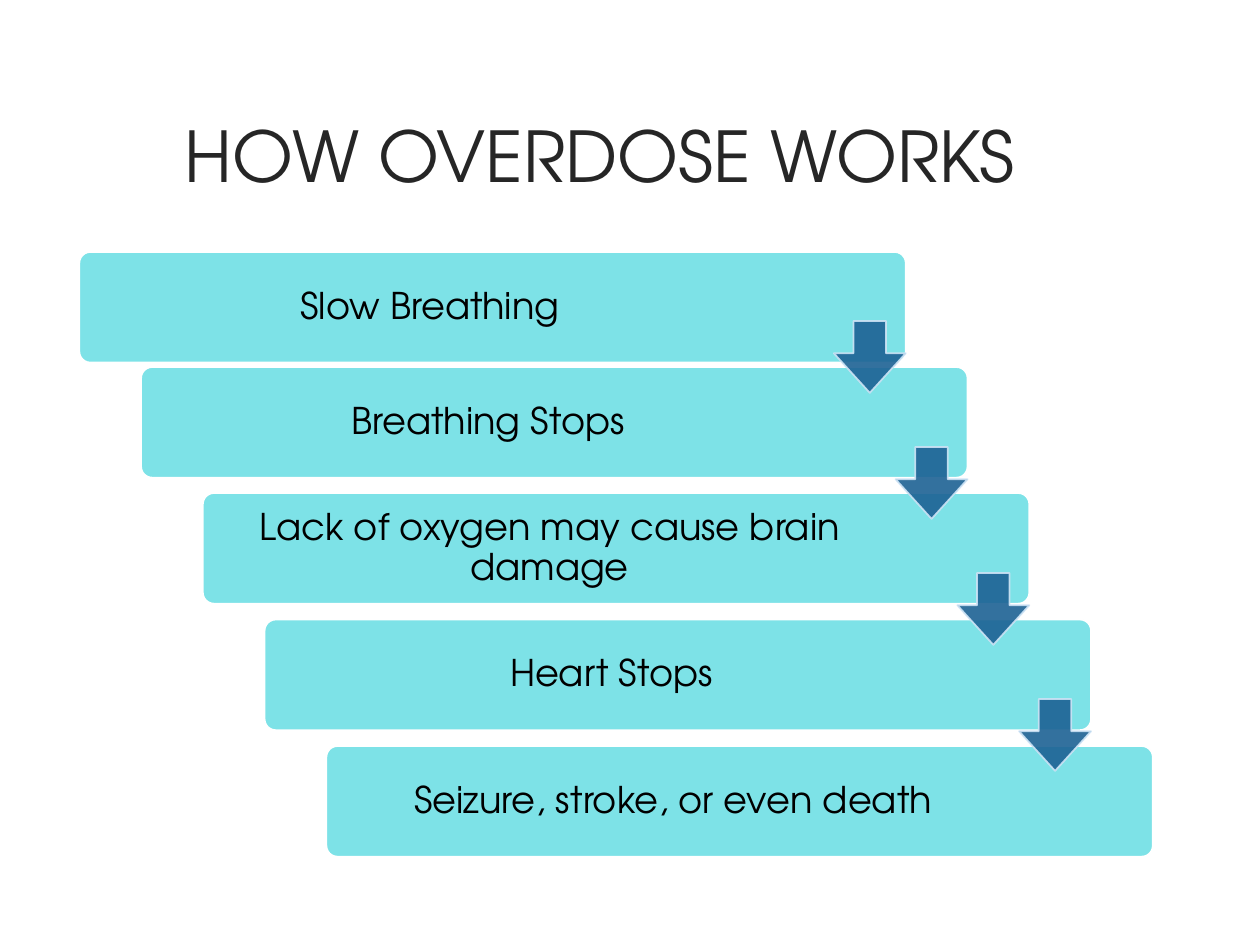
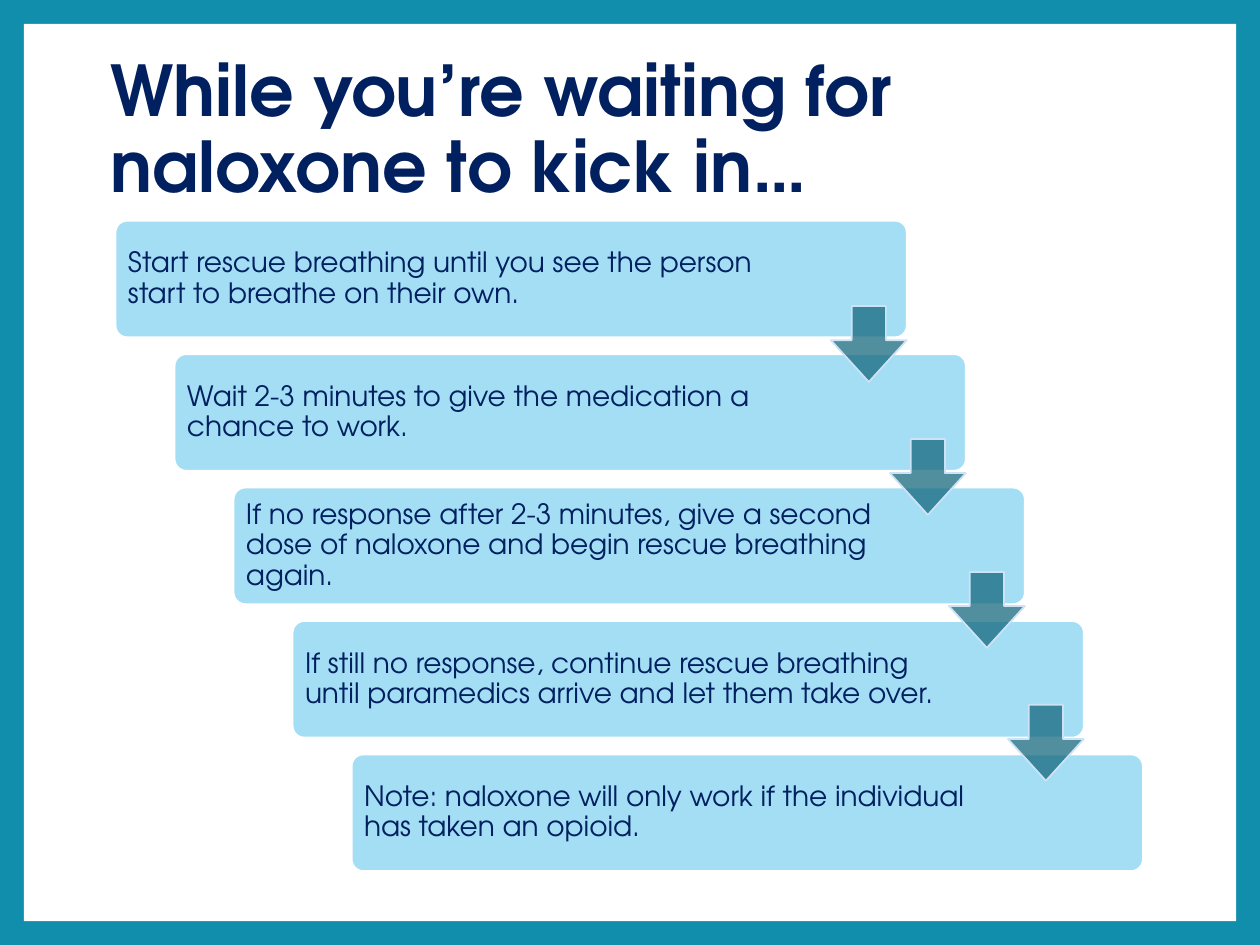
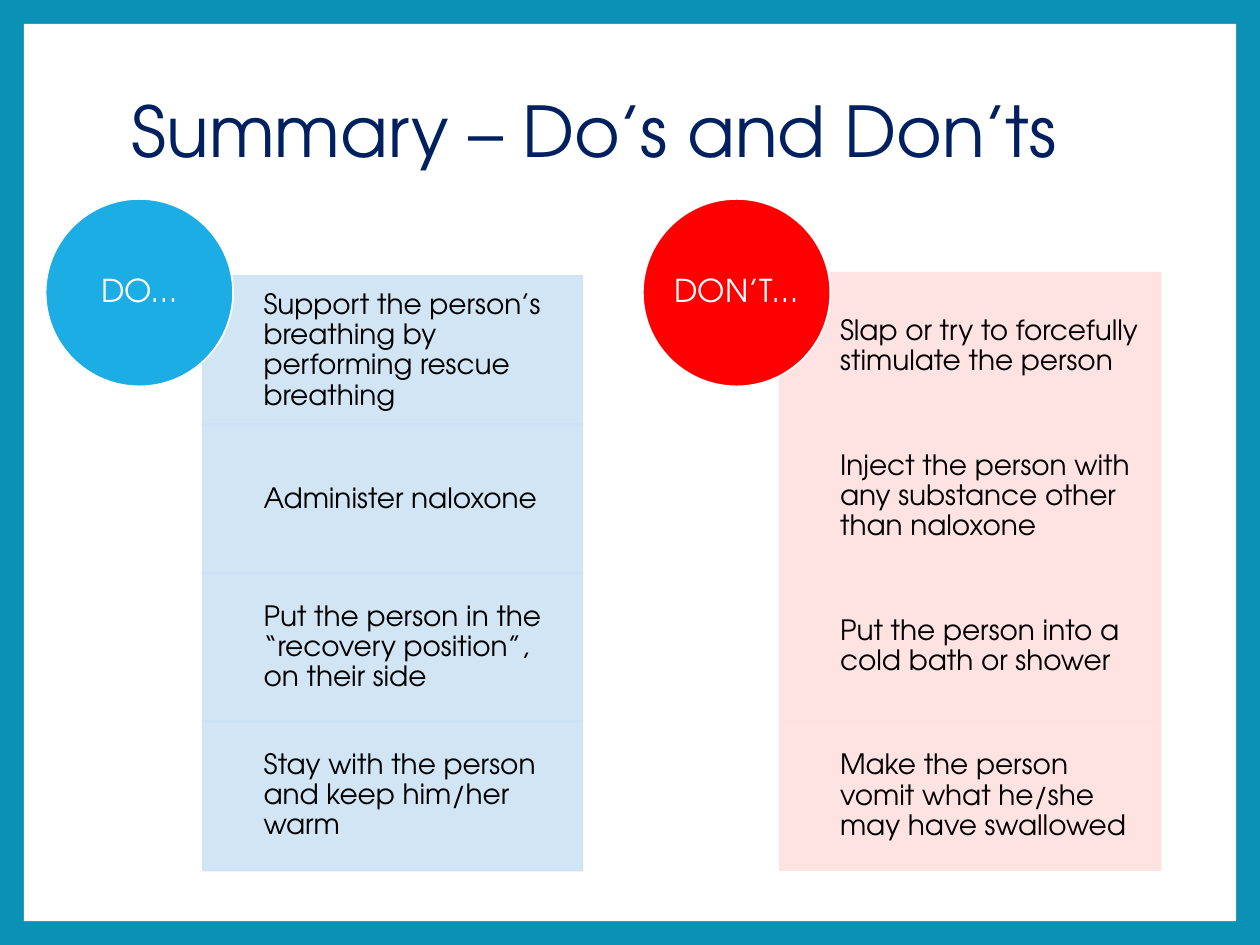
from dataclasses import dataclass

from lxml.etree import SubElement
from pptx import Presentation
from pptx.dml.color import RGBColor as Rgb
from pptx.enum.shapes import MSO_SHAPE as Shape
from pptx.enum.text import MSO_ANCHOR as Anchor, PP_ALIGN as Align
from pptx.oxml.ns import qn
from pptx.util import Cm, Pt

FONT = "TeX Gyre Adventor"
COLORS = {
    "white": "FFFFFF",
    "black": "000000",
    "charcoal": "262626",
    "navy": "002060",
    "aqua": "7DE2E7",
    "sky": "A4DEF4",
    "pale": "CDE3F5",
    "blue": "1CADE4",
    "red": "FF0000",
    "steel": "1D6294",
    "teal": "0F647B",
    "waiting_frame": "108EAC",
    "summary_frame": "0B91B5",
}


@dataclass
class Stairs:
    """Measures (cm) and colours of a staircase of steps joined by arrows."""

    left: float
    indent: float
    tops: list
    width: float
    height: float
    fill: str
    text_widths: list
    margin: float
    size: int
    color: str
    align: Align
    arrow_top: float
    arrow_pitch: float
    arrow_size: float
    arrow_fill: str
    arrow_opacity: int
    edge_opacity: int


def rgb(name):
    """Return the palette colour with this name."""
    return Rgb.from_string(COLORS[name])


def add_page(deck, frame=None):
    """Add a blank page, with a white panel inside a coloured frame if given."""
    page = deck.slides.add_slide(deck.slide_layouts[6])
    page.background.fill.solid()
    page.background.fill.fore_color.rgb = rgb(frame or "white")
    if frame:
        add_figure(page, Shape.RECTANGLE, (0.48, 0.48, 24.44, 18.09), "white")
    return page


def add_figure(page, kind, place, fill, line=None, opacities=(100, 100), adjust=()):
    """Add a filled preset shape; opacities are percentages for fill and line."""
    figure = page.shapes.add_shape(kind, *map(Cm, place))
    figure.shadow.inherit = False
    for index, value in enumerate(adjust):
        figure.adjustments[index] = value
    figure.fill.solid()
    figure.fill.fore_color.rgb = rgb(fill)
    if line:
        figure.line.color.rgb = rgb(line)
        figure.line.width = Pt(1)
    else:
        figure.line.fill.background()
    hues = figure._element.spPr.iter(qn("a:srgbClr"))
    for hue, opacity in zip(hues, opacities):
        if opacity < 100:
            SubElement(hue, qn("a:alpha")).set("val", str(opacity * 1000))


def add_text(page, place, text, size, color, align=Align.LEFT, margins=(0, 0, 0, 0), bold=False):
    """Add a vertically centred text box; margins run left, top, right, bottom."""
    box = page.shapes.add_textbox(*map(Cm, place))
    frame = box.text_frame
    frame.word_wrap = True
    frame.vertical_anchor = Anchor.MIDDLE
    frame.margin_left, frame.margin_top, frame.margin_right, frame.margin_bottom = map(Cm, margins)
    frame.text = text
    para = frame.paragraphs[0]
    para.alignment = align
    para.line_spacing = 0.9
    for span in para.runs:
        span.font.name = FONT
        span.font.size = Pt(size)
        span.font.bold = bold
        span.font.color.rgb = rgb(color)


def add_title(page, place, text, color, align=Align.LEFT, bold=False):
    """Add the page title."""
    add_text(page, place, text, 40, color, align, (0.25, 0.13, 0.25, 0.13), bold)


def add_stairs(page, stairs, steps):
    """Add one indented bar per step, then an arrow from each bar to the next."""
    lefts = [stairs.left + stairs.indent * index for index in range(len(steps))]
    for step, left, top, text_width in zip(steps, lefts, stairs.tops, stairs.text_widths):
        place = (left, top, stairs.width, stairs.height)
        add_figure(page, Shape.ROUNDED_RECTANGLE, place, stairs.fill, "white", adjust=[0.1])
        inner = (left + 0.07, top + 0.07, text_width, stairs.height - 0.14)
        add_text(page, inner, step, stairs.size, stairs.color, stairs.align, [stairs.margin] * 4)
    for index, left in enumerate(lefts[:-1]):
        arrow_left = left + stairs.width - stairs.arrow_size
        top = stairs.arrow_top + stairs.arrow_pitch * index
        place = (arrow_left, top, stairs.arrow_size, stairs.arrow_size)
        opacities = (stairs.arrow_opacity, stairs.edge_opacity)
        add_figure(page, Shape.DOWN_ARROW, place, stairs.arrow_fill, "pale", opacities, [0.45, 0.55])


def add_advice(page, place, pitch, panel, heading, circle_left, circle_fill, items):
    """Add a column of advice panels headed by a circle."""
    left, top, width, height = place
    indent = 0.16 * width
    for index, item in enumerate(items):
        row_top = top + pitch * index
        add_figure(page, Shape.RECTANGLE, (left, row_top, width, height), **panel)
        inner = (left + indent, row_top, width - indent, height)
        add_text(page, inner, item, 16, "black", margins=(0, 0.3, 0.3, 0.3))
    circle_top, diameter, inset = 4.01, 3.78, 0.56
    add_figure(page, Shape.OVAL, (circle_left, circle_top, diameter, diameter), circle_fill, "white")
    side = diameter - 2 * inset
    add_text(page, (circle_left + inset, circle_top + inset, side, side), heading, 18, "white", Align.CENTER)


def build_overdose(deck):
    """Build the page on how an overdose works."""
    page = add_page(deck)
    stairs = Stairs(
        left=1.6, indent=1.245, tops=[5.08, 7.4, 9.94, 12.49, 15.04],
        width=16.66, height=2.23, fill="aqua",
        text_widths=[14] + [13.84] * 4, margin=0.23, size=21, color="black", align=Align.CENTER,
        arrow_top=6.47, arrow_pitch=2.54, arrow_size=1.45,
        arrow_fill="steel", arrow_opacity=90, edge_opacity=90,
    )
    add_stairs(page, stairs, [
        "Slow Breathing",
        "Breathing Stops",
        "Lack of oxygen may cause brain damage",
        "Heart Stops",
        "Seizure, stroke, or even death",
    ])
    add_title(page, (1.42, 1.32, 21.34, 3.81), "HOW OVERDOSE WORKS", "charcoal", Align.CENTER)


def build_waiting(deck):
    """Build the page on what to do while naloxone takes effect."""
    page = add_page(deck, "waiting_frame")
    add_title(page, (1.98, 0.84, 21.06, 3.63), "While you’re waiting for naloxone to kick in…", "navy", bold=True)
    stairs = Stairs(
        left=2.33, indent=1.19, tops=[4.45 + 2.69 * index for index in range(5)],
        width=15.95, height=2.35, fill="sky",
        text_widths=[13.13] + [13.08] * 4, margin=0.18, size=16, color="navy", align=Align.LEFT,
        arrow_top=6.17, arrow_pitch=2.68, arrow_size=1.53,
        arrow_fill="teal", arrow_opacity=72, edge_opacity=100,
    )
    add_stairs(page, stairs, [
        "Start rescue breathing until you see the person start to breathe on their own.",
        "Wait 2-3 minutes to give the medication a chance to work.",
        "If no response after 2-3 minutes, give a second dose of naloxone and begin rescue breathing again.",
        "If still no response, continue rescue breathing until paramedics arrive and let them take over.",
        "Note: naloxone will only work if the individual has taken an opioid.",
    ])


def build_summary(deck):
    """Build the page of do's and don'ts."""
    page = add_page(deck, "summary_frame")
    add_title(page, (2.41, 0.81, 21.34, 3.81), "Summary – Do’s and Don’ts", "navy")
    do_panel = {"fill": "pale", "line": "pale", "opacities": (90, 90)}
    add_advice(page, (4.09, 5.56, 7.65, 3.02), 2.99, do_panel, "DO…", 0.92, "blue", [
        "Support the person’s breathing by performing rescue breathing",
        "Administer naloxone",
        "Put the person in the “recovery position”, on their side",
        "Stay with the person and keep him/her warm",
    ])
    dont_panel = {"fill": "red", "opacities": (11,)}
    add_advice(page, (15.7, 5.48, 7.72, 3.02), 3.02, dont_panel, "DON’T…", 12.96, "red", [
        "Slap or try to forcefully stimulate the person",
        "Inject the person with any substance other than naloxone",
        "Put the person into a cold bath or shower",
        "Make the person vomit what he/she may have swallowed",
    ])


def main():
    """Build the deck and save it."""
    deck = Presentation()
    deck.slide_width, deck.slide_height = Cm(25.4), Cm(19.05)
    build_overdose(deck)
    build_waiting(deck)
    build_summary(deck)
    deck.save("out.pptx")


if __name__ == "__main__":
    main()
